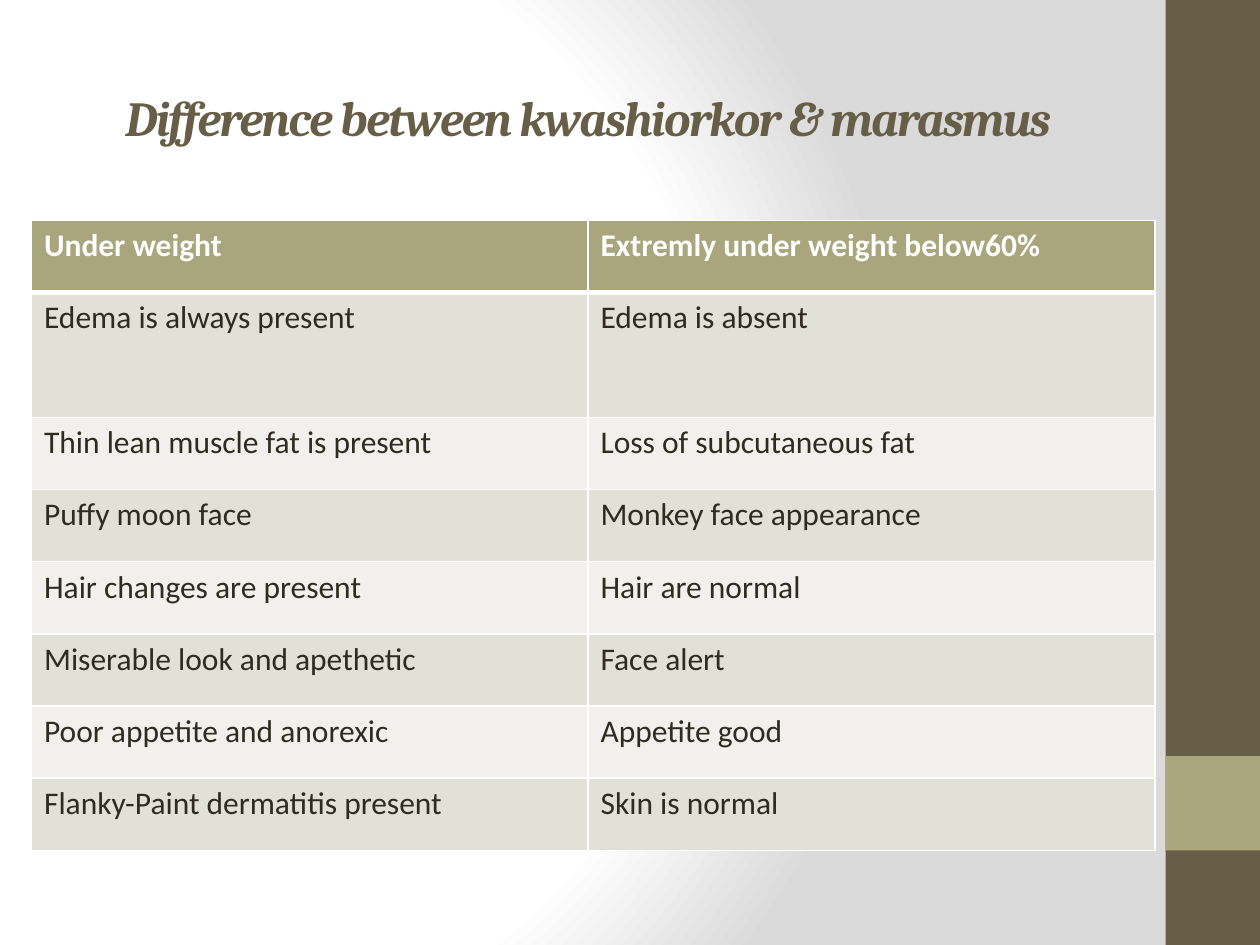
import pptx
import pptx.util
import pptx.dml.color
import pptx.enum.shapes
import pptx.enum.text
import pptx.oxml
from pptx.oxml.ns import nsdecls, qn

Pt = pptx.util.Pt

COLORS = {
    "white": "FFFFFF",
    "grey": "DADADA",
    "brown": "675E47",
    "olive": "A9A57C",
    "text": "2F2B20",
    "band_dark": "E2E1D7",
    "band_light": "F1F0EC",
}

ROWS = [
    ("Under weight", "Extremly under weight below60%"),
    ("Edema is always present", "Edema is absent"),
    ("Thin lean muscle fat is present", "Loss of subcutaneous fat"),
    ("Puffy moon face", "Monkey face appearance"),
    ("Hair changes are present", "Hair are normal"),
    ("Miserable look and apethetic", "Face alert"),
    ("Poor appetite and anorexic", "Appetite good"),
    ("Flanky-Paint dermatitis present", "Skin is normal"),
]
COL_WIDTHS = (318, 324)
ROW_HEIGHT, TALL_ROW_HEIGHT = 41.25, 71.25


def rgb(name):
    return pptx.dml.color.RGBColor.from_string(COLORS[name])


def set_background(s):
    s.background.fill.gradient()
    old = s.element.find(".//" + qn("a:gradFill"))
    stops = "".join(
        f'<a:gs pos="{pos * 1000}"><a:srgbClr val="{COLORS[name]}"/></a:gs>'
        for pos, name in ((0, "white"), (75, "white"), (100, "grey")))
    grad = pptx.oxml.parse_xml(
        f'<a:gradFill {nsdecls("a")} rotWithShape="1"><a:gsLst>{stops}</a:gsLst>'
        '<a:path path="circle">'
        '<a:fillToRect l="20000" t="50000" r="100000" b="50000"/>'
        '</a:path></a:gradFill>')
    old.getparent().replace(old, grad)


def add_block(s, x, y, w, h, color):
    sp = s.shapes.add_shape(pptx.enum.shapes.MSO_SHAPE.RECTANGLE,
                            Pt(x), Pt(y), Pt(w), Pt(h))
    sp.shadow.inherit = False
    sp.fill.solid()
    sp.fill.fore_color.rgb = rgb(color)
    sp.line.fill.background()


def set_font(p, name, size, color, bold=False, italic=False):
    f = p.font
    f.name, f.size, f.bold, f.italic = name, Pt(size), bold, italic
    f.color.rgb = rgb(color)


def add_title(s, text, x, y, w, h):
    tf = s.shapes.add_textbox(Pt(x), Pt(y), Pt(w), Pt(h)).text_frame
    tf.word_wrap = True
    tf.vertical_anchor = pptx.enum.text.MSO_ANCHOR.MIDDLE
    p = tf.paragraphs[0]
    p.alignment = pptx.enum.text.PP_ALIGN.CENTER
    r = p.add_run()
    r.text = text
    set_font(p, "Cambria", 28, "brown", bold=True, italic=True)
    # Tighten the letter spacing by one point
    r.font._element.set("spc", "-100")


def set_borders(cell, bottom):
    tcPr = cell._tc.get_or_add_tcPr()
    widths = {"lnL": 1, "lnR": 1, "lnT": 1, "lnB": bottom}
    # Borders come before the fill in a cell's properties
    for i, (tag, width) in enumerate(widths.items()):
        tcPr.insert(i, pptx.oxml.parse_xml(
            f'<a:{tag} {nsdecls("a")} w="{Pt(width)}"><a:solidFill>'
            f'<a:srgbClr val="{COLORS["white"]}"/></a:solidFill></a:{tag}>'))


def fill_cell(cell, text, row):
    header = row == 0
    fill = "olive" if header else "band_dark" if row % 2 else "band_light"
    cell.fill.solid()
    cell.fill.fore_color.rgb = rgb(fill)
    cell.text = text
    set_font(cell.text_frame.paragraphs[0], "Calibri", 18,
             "white" if header else "text", bold=header)
    # The header has a thick lower edge, shared with the first body row
    set_borders(cell, 3 if header else 1)
    if row == 1:
        cell._tc.tcPr.find(qn("a:lnT")).set("w", str(Pt(3)))


def add_comparison(s, x, y):
    height = ROW_HEIGHT * (len(ROWS) - 1) + TALL_ROW_HEIGHT
    table = s.shapes.add_table(len(ROWS), len(COL_WIDTHS), Pt(x), Pt(y),
                               Pt(sum(COL_WIDTHS)), Pt(height)).table
    for column, width in zip(table.columns, COL_WIDTHS):
        column.width = Pt(width)
    for i, texts in enumerate(ROWS):
        table.rows[i].height = Pt(TALL_ROW_HEIGHT if i == 1 else ROW_HEIGHT)
        for j, text in enumerate(texts):
            fill_cell(table.cell(i, j), text, i)


def main():
    prs = pptx.Presentation()
    prs.slide_width, prs.slide_height = Pt(720), Pt(540)
    s = prs.slides.add_slide(prs.slide_layouts[6])

    # Background and side bar
    set_background(s)
    add_block(s, 666, 0, 54, 540, "brown")
    add_block(s, 666, 432, 54, 54, "olive")

    # Title and table
    add_title(s, "Difference between kwashiorkor & marasmus", 36, 21.6, 600, 90)
    add_comparison(s, 18, 126)

    prs.save("out.pptx")


if __name__ == "__main__":
    main()
